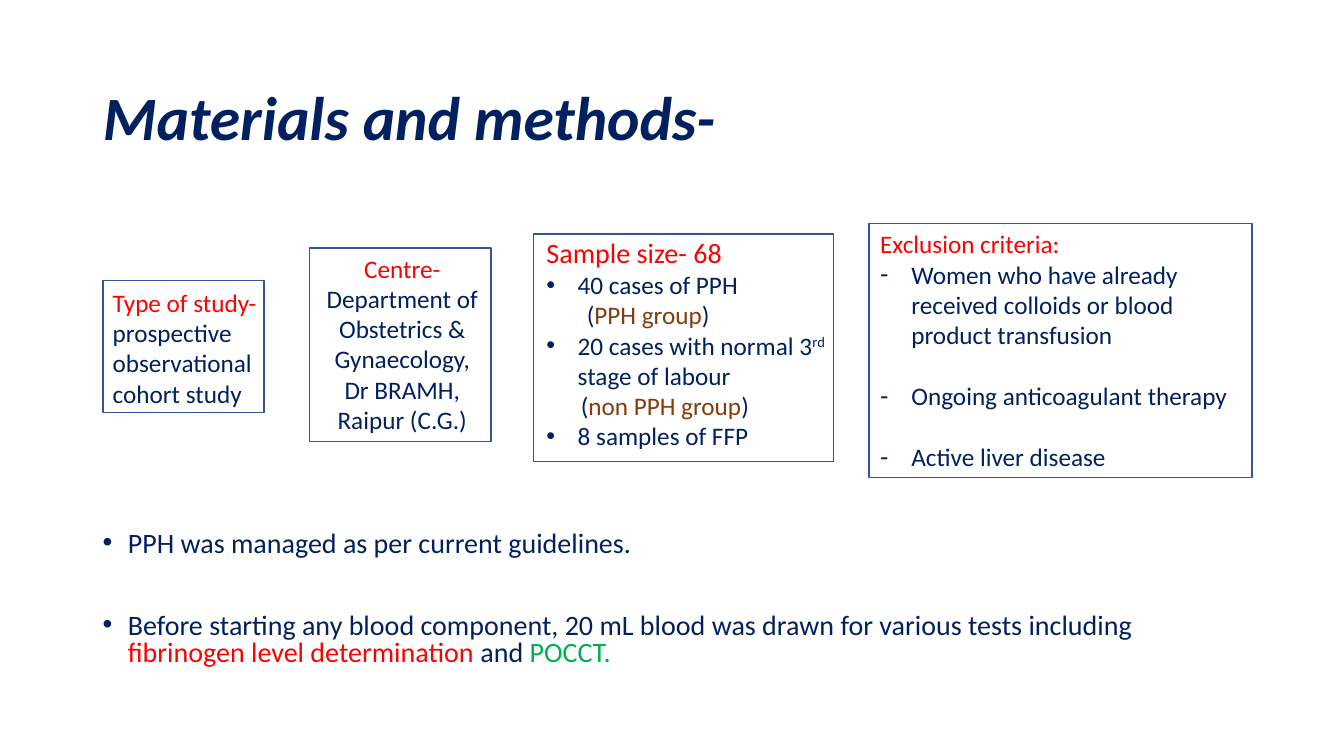
from dataclasses import dataclass

from lxml.etree import SubElement
from pptx import Presentation
from pptx.dml.color import RGBColor
from pptx.enum.shapes import MSO_SHAPE
from pptx.enum.text import MSO_ANCHOR, MSO_AUTO_SIZE, PP_ALIGN
from pptx.oxml.ns import qn
from pptx.util import Inches, Pt


@dataclass(frozen=True)
class Theme:
    """Colours, font and type sizes of the slide."""
    font: str = "Calibri"
    navy: str = "002060"
    red: str = "FF0000"
    brown: str = "843C0B"
    green: str = "00B050"
    outline: str = "325491"
    title: int = 44
    large: int = 20
    body: int = 18


class Deck:
    """Style and current slide, measured in grid cells of a tenth of an inch."""

    def __init__(self, prs, theme):
        """Set the theme and add a title-only slide."""
        self.theme = theme
        self.s = prs.slides.add_slide(prs.slide_layouts[5])

    def grid(self, *cells):
        """Convert columns and rows to lengths."""
        return [Inches(c / 10) for c in cells]

    def apply(self, target, formats):
        """Set every format value on the target."""
        for name, value in formats.items():
            setattr(target, name, value)

    def frame(self, sp, insets, anchor=MSO_ANCHOR.TOP):
        """Prepare the text frame of a shape."""
        tf = sp.text_frame
        names = ("margin_left", "margin_top", "margin_right", "margin_bottom")
        self.apply(tf, dict(zip(names, self.grid(*insets)), word_wrap=True,
                            auto_size=MSO_AUTO_SIZE.NONE, vertical_anchor=anchor))
        return tf

    def add_run(self, p, text, color=None, size=None, sup=False, **font):
        """Add one formatted run."""
        r = p.add_run()
        r.text = text
        self.apply(r.font, {"name": self.theme.font, "size": Pt(size or self.theme.body), **font})
        r.font.color.rgb = RGBColor.from_string(color or self.theme.navy)
        if sup:
            r.font._element.set("baseline", "30000")

    def indent(self, p, left, bullet=None):
        """Indent a paragraph, hanging it from its bullet if it has one."""
        pPr = p._p.get_or_add_pPr()
        pPr.set("marL", str(Inches(left)))
        pPr.set("indent", str(-Inches(left) if bullet else 0))
        if bullet:
            SubElement(pPr, qn("a:buFont"), typeface="Arial")
            SubElement(pPr, qn("a:buChar"), char=bullet)

    def fill_text(self, tf, paragraphs, size=None, align=PP_ALIGN.LEFT, spacing=1.0):
        """Fill a text frame from (runs, options) paragraphs."""
        for i, (runs, opts) in enumerate(paragraphs):
            p = tf.add_paragraph() if i else tf.paragraphs[0]
            self.apply(p, {"alignment": align, "line_spacing": spacing,
                           "space_before": Pt(opts.get("before", 0))})
            if "left" in opts:
                self.indent(p, opts["left"], opts.get("bullet"))
            for text, *style in runs:
                formats = {"size": opts.get("size", size)}
                for item in style:
                    formats.update(item if isinstance(item, dict) else {"color": item})
                self.add_run(p, text, **formats)

    def title(self, text, place):
        """Place and format the slide title."""
        sp = self.s.shapes.title
        self.apply(sp, dict(zip(("left", "top", "width", "height"), self.grid(*place))))
        tf = self.frame(sp, (1, 0.5, 1, 0.5), MSO_ANCHOR.MIDDLE)
        style = {"bold": True, "italic": True}
        self.fill_text(tf, [([(text, style)], {})], self.theme.title, spacing=0.9)

    def box(self, place, insets, paragraphs, align=PP_ALIGN.LEFT):
        """Add an outlined box with text."""
        sp = self.s.shapes.add_shape(MSO_SHAPE.RECTANGLE, *self.grid(*place))
        sp.shadow.inherit = False
        sp.fill.background()
        sp.line.color.rgb = RGBColor.from_string(self.theme.outline)
        sp.line.width = Pt(1)
        self.fill_text(self.frame(sp, insets), paragraphs, align=align)

    def text(self, place, paragraphs):
        """Add the large body text."""
        sp = self.s.shapes.add_textbox(*self.grid(*place))
        tf = self.frame(sp, (1, 0.5, 1, 0.5))
        self.fill_text(tf, paragraphs, self.theme.large, spacing=0.8)


def main():
    """Build the slide."""
    prs = Presentation()
    prs.slide_width, prs.slide_height = Inches(13.33), Inches(7.5)
    th = Theme()
    deck = Deck(prs, th)
    dot = {"left": 0.31, "bullet": "•"}
    dash = {"left": 0.31, "bullet": "-"}
    point = {"left": 0.25, "bullet": "•"}

    deck.title("Materials and methods-", (9.2, 4.7, 115, 14.5))
    deck.text((9.2, 52.3, 115, 15.2), [
        ([("PPH was managed as per current guidelines.",)], {**point, "before": 10}),
        ([("Before starting any blood component, 20 mL blood was drawn for various tests including ",),
          ("fibrinogen level determination ", th.red), ("and ",), ("POCCT.", th.green)],
         {**point, "before": 39}),
    ])
    deck.box((10.2, 27.8, 16, 13.1), (1, 0.7, 0.2, 0), [
        ([("Type of study- ", th.red), ("prospective observational cohort study",)], {}),
    ])
    deck.box((30.7, 24.6, 18, 19.2), (1.2, 0.5, 0.8, 0.5), [
        ([("Centre- ", th.red),
          ("Department of Obstetrics & Gynaecology, Dr BRAMH, Raipur (C.G.)",)], {}),
    ], PP_ALIGN.CENTER)
    deck.box((52.9, 23.2, 29.8, 22.6), (1.3, 0.2, 0, 0), [
        ([("Sample size- 68", th.red)], {"size": th.large}),
        ([("40 cases of PPH",)], dot),
        ([("(",), ("PPH group", th.brown), (")",)], {"left": 0.4}),
        ([("20 cases with normal 3",), ("rd", {"sup": True}), (" stage of labour",)], dot),
        ([("(",), ("non PPH group", th.brown), (")",)], {"left": 0.34}),
        ([("8 samples of FFP",)], dot),
    ])
    deck.box((86.2, 22.2, 38, 25.2), (1.1, 0.5, 0.3, 0.5), [
        ([("Exclusion criteria:", th.red)], {}),
        ([("Women who have already received colloids or blood product transfusion",)], dash),
        ([("Ongoing anticoagulant therapy",)], {**dash, "before": 22}),
        ([("Active liver disease",)], {**dash, "before": 22}),
    ])
    prs.save("out.pptx")


if __name__ == "__main__":
    main()
